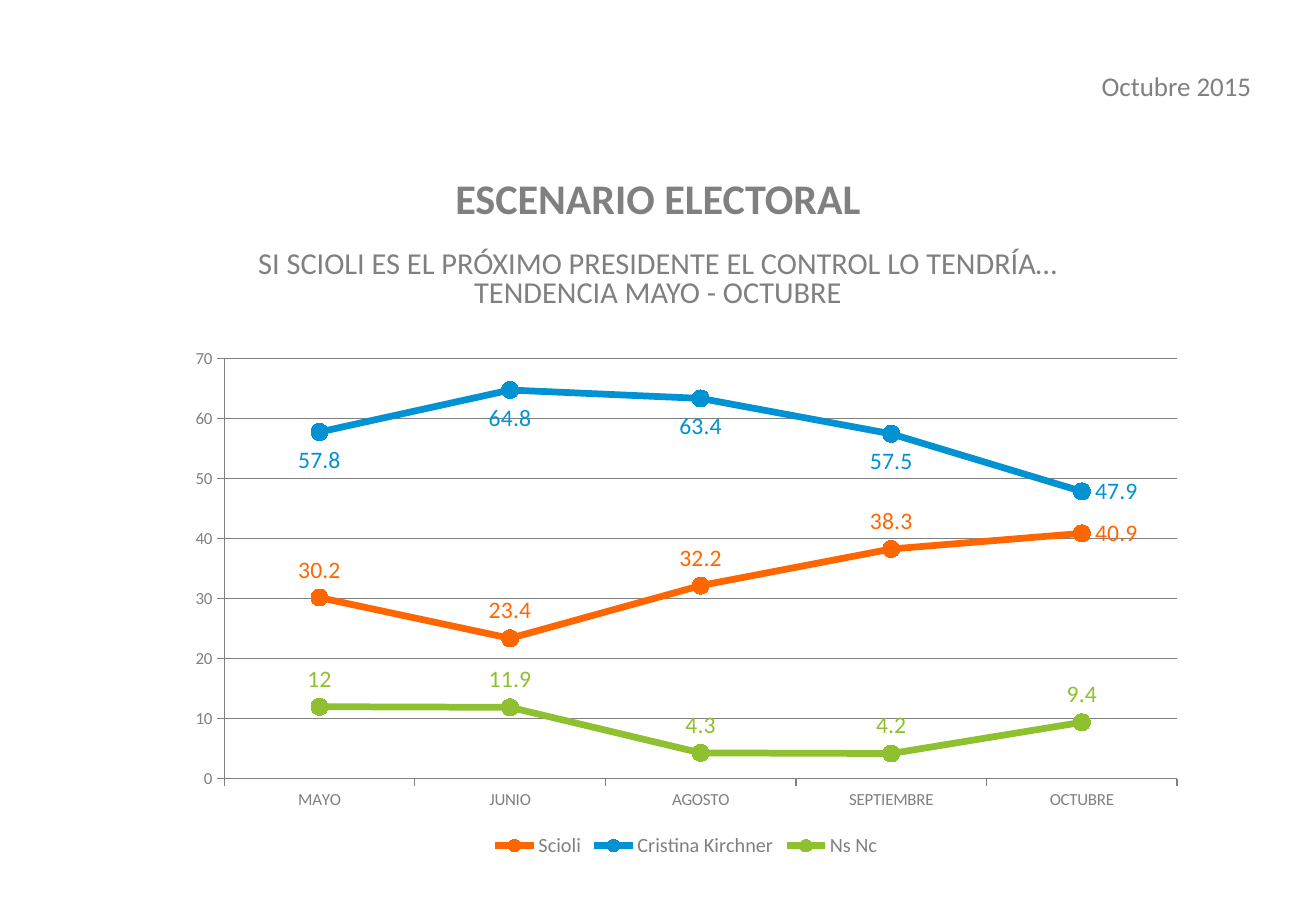
from dataclasses import dataclass

from pptx import Presentation, util as u
from pptx.chart.data import CategoryChartData
from pptx.dml.color import RGBColor
from pptx.enum import chart as charts, text

Position = charts.XL_LABEL_POSITION


@dataclass(frozen=True)
class Theme:
    font: str = "Calibri"
    grey: str = "808080"
    orange: str = "FF6600"
    blue: str = "0092D2"
    green: str = "8EC02F"
    heading: int = 25
    subtitle: int = 18
    date: int = 16
    label: int = 14
    legend: int = 12
    axis: int = 10


@dataclass(frozen=True)
class Area:
    """A rectangle in shares of the slide's width and height."""
    left: float
    top: float
    width: float
    height: float


@dataclass(frozen=True)
class Trend:
    name: str
    values: tuple[float, ...]
    color: str
    label_side: Position
    last_label_side: Position


THEME = Theme()
WIDTH, HEIGHT = u.Inches(10.83), u.Inches(7.5)
TITLE_AREA = Area(0, 0.2, 1, 0.16)
DATE_AREA = Area(0.79, 0.07, 0.17, 0.05)
CHART_AREA = Area(0.133, 0.372, 0.777, 0.575)
MONTHS = ("MAYO", "JUNIO", "AGOSTO", "SEPTIEMBRE", "OCTUBRE")
TITLE_LINES = (
    ("ESCENARIO ELECTORAL", THEME.heading, True, 0),
    ("SI SCIOLI ES EL PRÓXIMO PRESIDENTE EL CONTROL LO TENDRÍA…", THEME.subtitle, False, 17),
    ("TENDENCIA MAYO - OCTUBRE", THEME.subtitle, False, 0),
)
TRENDS = (
    Trend("Scioli", (30.2, 23.4, 32.2, 38.3, 40.9), THEME.orange,
          Position.ABOVE, Position.RIGHT),
    Trend("Cristina Kirchner", (57.8, 64.8, 63.4, 57.5, 47.9), THEME.blue,
          Position.BELOW, Position.RIGHT),
    Trend("Ns Nc", (12, 11.9, 4.3, 4.2, 9.4), THEME.green,
          Position.ABOVE, Position.ABOVE),
)


def frame(area: Area) -> tuple[int, int, int, int]:
    """Turn shares into left, top, width and height."""
    return (int(area.left * WIDTH), int(area.top * HEIGHT),
            int(area.width * WIDTH), int(area.height * HEIGHT))


def set_font(font, size: int, color: str = THEME.grey, bold: bool = False) -> None:
    font.name, font.size, font.bold = THEME.font, u.Pt(size), bold
    font.color.rgb = RGBColor.from_string(color)


def set_line(line, color: str, width: float) -> None:
    line.color.rgb = RGBColor.from_string(color)
    line.width = u.Pt(width)


def fill_title(title) -> None:
    title.left, title.top, title.width, title.height = frame(TITLE_AREA)
    box = title.text_frame
    box.word_wrap = True
    box.auto_size = text.MSO_AUTO_SIZE.NONE
    box.vertical_anchor = text.MSO_ANCHOR.TOP
    box.margin_top = box.margin_bottom = 0
    box.text = "\n".join(line[0] for line in TITLE_LINES)
    for para, (_, size, bold, gap) in zip(box.paragraphs, TITLE_LINES):
        para.alignment = text.PP_ALIGN.CENTER
        para.line_spacing = 0.8
        para.space_before = u.Pt(gap)
        set_font(para.font, size, bold=bold)


def add_date(page, wording: str) -> None:
    box = page.shapes.add_textbox(*frame(DATE_AREA)).text_frame
    box.word_wrap = True
    para = box.paragraphs[0]
    para.text = wording
    para.alignment = text.PP_ALIGN.RIGHT
    set_font(para.font, THEME.date)


def style_trend(series, trend: Trend) -> None:
    series.smooth = False
    set_line(series.format.line, trend.color, 4)
    marker = series.marker
    marker.style, marker.size = charts.XL_MARKER_STYLE.CIRCLE, 10
    marker.format.fill.solid()
    marker.format.fill.fore_color.rgb = RGBColor.from_string(trend.color)
    set_line(marker.format.line, trend.color, 0.75)
    labels = series.data_labels
    labels.show_value, labels.position = True, trend.label_side
    set_font(labels.font, THEME.label, trend.color)
    if trend.last_label_side != trend.label_side:
        last = series.points[len(trend.values) - 1].data_label
        set_font(last.font, THEME.label, trend.color)
        last.position = trend.last_label_side


def add_trend_chart(page) -> None:
    data = CategoryChartData()
    data.categories = MONTHS
    for trend in TRENDS:
        data.add_series(trend.name, trend.values)
    chart = page.shapes.add_chart(
        charts.XL_CHART_TYPE.LINE_MARKERS, *frame(CHART_AREA), data).chart
    set_font(chart.font, THEME.axis)
    chart.has_title = False
    chart.has_legend = True
    chart.legend.position = charts.XL_LEGEND_POSITION.BOTTOM
    chart.legend.include_in_layout = False
    set_font(chart.legend.font, THEME.legend)
    chart.plots[0].vary_by_categories = False

    values = chart.value_axis
    values.minimum_scale, values.maximum_scale, values.major_unit = 0, 70, 10
    values.has_major_gridlines = True
    set_line(values.major_gridlines.format.line, THEME.grey, 0.75)
    for axis in (chart.category_axis, values):
        axis.major_tick_mark = charts.XL_TICK_MARK.OUTSIDE
        set_line(axis.format.line, THEME.grey, 0.75)
        set_font(axis.tick_labels.font, THEME.axis)
    for series, trend in zip(chart.plots[0].series, TRENDS):
        style_trend(series, trend)


def main() -> None:
    deck = Presentation()
    deck.slide_width, deck.slide_height = WIDTH, HEIGHT
    page = deck.slides.add_slide(deck.slide_layouts.get_by_name("Title Only"))
    fill_title(page.shapes.title)
    add_date(page, "Octubre 2015")
    add_trend_chart(page)
    deck.save("out.pptx")


if __name__ == "__main__":
    main()
